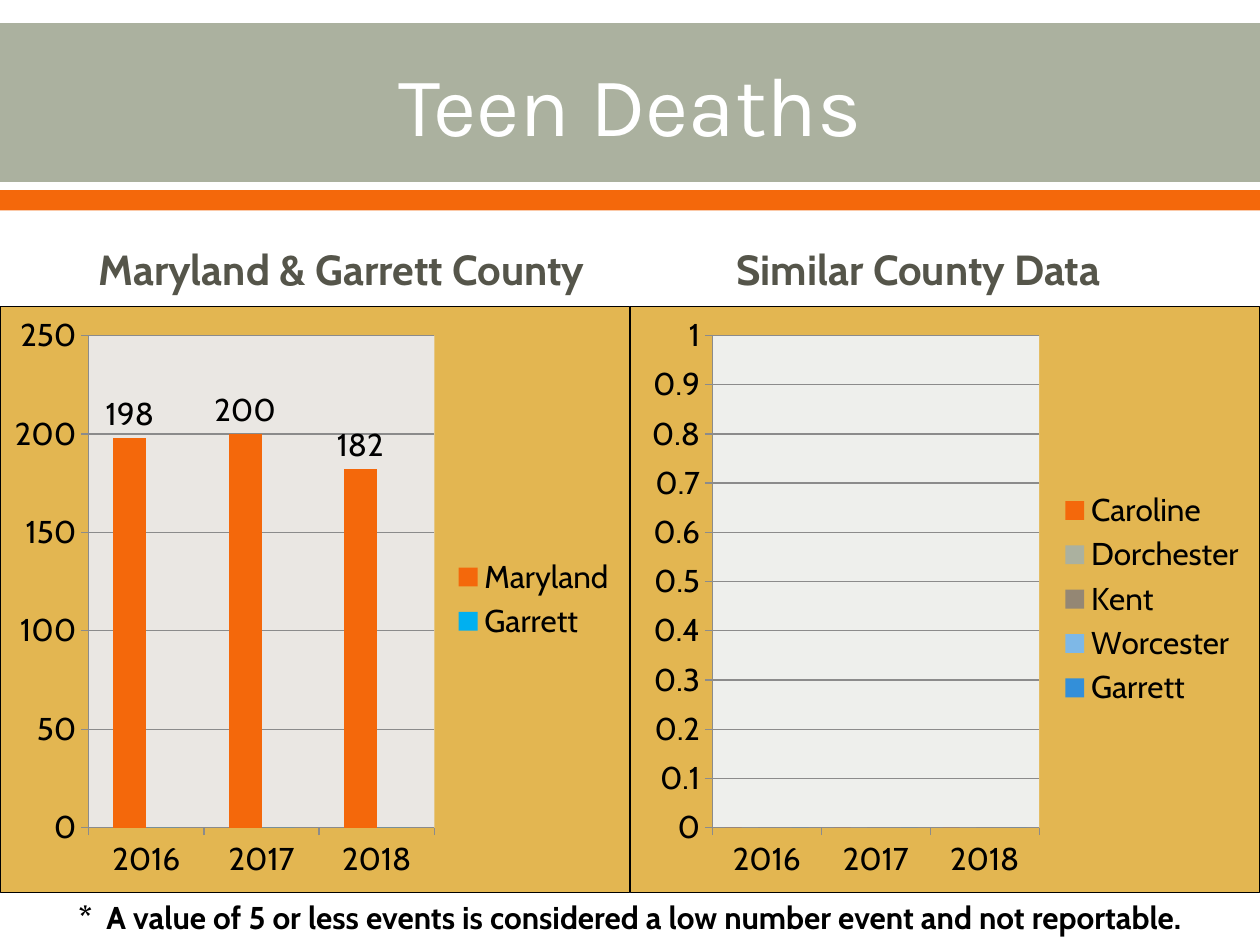
from pptx import Presentation
from pptx.chart.data import CategoryChartData as ChartData
from pptx.dml.color import RGBColor
from pptx.enum.chart import (XL_CHART_TYPE as ChartType, XL_LABEL_POSITION as LabelPosition,
                             XL_LEGEND_POSITION as LegendPosition, XL_TICK_MARK as TickMark)
from pptx.enum.shapes import MSO_SHAPE as Preset
from pptx.enum.text import MSO_ANCHOR as Anchor, MSO_AUTO_SIZE as AutoSize, PP_ALIGN as Align
from pptx.oxml import parse_xml
from pptx.oxml.ns import nsdecls, qn
from pptx.util import Pt

WHITE = RGBColor(0xFF, 0xFF, 0xFF)
BLACK = RGBColor(0, 0, 0)
SAGE = RGBColor(0xAB, 0xB1, 0x9F)
ORANGE = RGBColor(0xF4, 0x68, 0x0B)
OLIVE = RGBColor(0x55, 0x55, 0x4A)
GOLD = RGBColor(0xE3, 0xB6, 0x51)
WARM_GREY = RGBColor(0xEA, 0xE7, 0xE3)
COOL_GREY = RGBColor(0xEE, 0xEF, 0xEC)
LINE_GREY = RGBColor(0x8B, 0x8B, 0x8B)
CYAN = RGBColor(0x00, 0xB0, 0xF0)
TAUPE = RGBColor(0x94, 0x87, 0x74)
SKY = RGBColor(0x7E, 0xB8, 0xE7)
BLUE = RGBColor(0x33, 0x8F, 0xD9)

YEARS = ("2016", "2017", "2018")
NO_DEATHS = (0, 0, 0)
STATE_SERIES = (("Maryland", (198, 200, 182), ORANGE), ("Garrett", NO_DEATHS, CYAN))
COUNTY_SERIES = (
    ("Caroline", NO_DEATHS, ORANGE),
    ("Dorchester", NO_DEATHS, SAGE),
    ("Kent", NO_DEATHS, TAUPE),
    ("Worcester", (None, None, None), SKY),
    ("Garrett", NO_DEATHS, BLUE),
)


def set_font(font, color, **values):
    """Apply a colour and any format values to a font."""
    for name, value in values.items():
        setattr(font, name, value)
    font.color.rgb = color


def place(item, box):
    """Move and size an item to a box given in points."""
    for name, value in zip(("left", "top", "width", "height"), box):
        setattr(item, name, Pt(value))


def write_text(item, box, text, anchor, color, **values):
    """Put one centred, formatted line of text in an item."""
    place(item, box)
    frame = item.text_frame
    frame.word_wrap = True
    frame.auto_size = AutoSize.NONE
    frame.vertical_anchor = anchor
    para = frame.paragraphs[0]
    para.alignment = Align.CENTER
    span = para.add_run()
    span.text = text
    set_font(span.font, color, **values)


def add_band(page, box, color):
    """Draw a plain colour band behind everything else."""
    band = page.shapes.add_shape(Preset.RECTANGLE, *map(Pt, box))
    band.shadow.inherit = False
    band.fill.solid()
    band.fill.fore_color.rgb = color
    band.line.fill.background()
    page.shapes.element.insert(2, band.element)


def add_header(page, box):
    """Draw the title on its sage band with the orange stripe below."""
    left, top, width, height = box
    add_band(page, (left, top, width, height), SAGE)
    add_band(page, (left, top + height + 4.6, width, 11.7), ORANGE)
    write_text(page.shapes.title, (left + 36, top + 1.4, width - 72, height - 2.8), "Teen Deaths",
               Anchor.MIDDLE, WHITE, size=Pt(48), name="Karla", bold=False)


def area_format(fill, line):
    """Return shape properties with a solid fill and a line element."""
    return parse_xml(f'<c:spPr {nsdecls("c", "a")}><a:solidFill><a:srgbClr val="{fill}"/>'
                     f'</a:solidFill>{line}</c:spPr>')


def paint_chart(chart, plot_fill, plot_box):
    """Colour the chart and plot areas and fix the inner plot box."""
    border = f'<a:ln w="{Pt(0.75)}"><a:solidFill><a:srgbClr val="{BLACK}"/></a:solidFill></a:ln>'
    body = chart.element.find(qn("c:chart"))
    body.addnext(area_format(GOLD, border))
    area = body.find(qn("c:plotArea"))
    for old in area.findall(qn("c:layout")):
        area.remove(old)
    modes = '<c:layoutTarget val="inner"/><c:xMode val="edge"/><c:yMode val="edge"/>'
    sides = "".join(f'<c:{side} val="{value}"/>' for side, value in zip("xywh", plot_box))
    area.insert(0, parse_xml(f'<c:layout {nsdecls("c")}><c:manualLayout>{modes}{sides}'
                             '</c:manualLayout></c:layout>'))
    area.append(area_format(plot_fill, "<a:ln><a:noFill/></a:ln>"))


def format_axes(chart, top, step):
    """Set the scale, ticks, lines and gridlines of both axes."""
    scale = chart.value_axis
    limits = dict(minimum_scale=0, maximum_scale=top, major_unit=step, has_major_gridlines=True)
    for name, value in limits.items():
        setattr(scale, name, value)
    scale.tick_labels.number_format = "General"
    scale.tick_labels.number_format_is_linked = False
    for axis in (scale, chart.category_axis):
        axis.major_tick_mark = TickMark.OUTSIDE
        axis.minor_tick_mark = TickMark.NONE
    for part in (scale, chart.category_axis, scale.major_gridlines):
        part.format.line.color.rgb = LINE_GREY
        part.format.line.width = Pt(0.75)


def add_column_chart(page, box, rows, top, step, plot_fill, plot_box):
    """Draw a clustered column chart with a legend on the right."""
    data = ChartData()
    data.categories = YEARS
    for name, values, _ in rows:
        data.add_series(name, values)
    chart = page.shapes.add_chart(ChartType.COLUMN_CLUSTERED, *map(Pt, box), data).chart
    set_font(chart.font, BLACK, size=Pt(18), name="Cabin")
    chart.has_title = False
    chart.has_legend = True
    chart.legend.position = LegendPosition.RIGHT
    chart.legend.include_in_layout = False
    plot = chart.plots[0]
    for name, value in dict(gap_width=150, overlap=0, vary_by_categories=False).items():
        setattr(plot, name, value)
    for series, (_, _, color) in zip(plot.series, rows):
        series.format.fill.solid()
        series.format.fill.fore_color.rgb = color
    format_axes(chart, top, step)
    paint_chart(chart, plot_fill, plot_box)
    return chart


def add_panel(page, box, heading, text, heading_left, **chart_values):
    """Place a heading over a column chart and return the chart."""
    left, top, width, height = box
    write_text(heading, (heading_left, top, 318.2, 50.4), text, Anchor.BOTTOM, OLIVE,
               size=Pt(24), name="Cabin", bold=True)
    return add_column_chart(page, (left, top + 53.6, width, height - 53.6), **chart_values)


def add_footnote(page, box):
    """Write the note on low values along the bottom edge."""
    write_text(page.shapes.add_textbox(0, 0, 0, 0), box,
               "*  A value of 5 or less events is considered a low number event and not reportable.",
               Anchor.TOP, BLACK, size=Pt(18), name="Cabin", bold=True)


def main():
    """Build the slide and save the deck."""
    deck = Presentation()
    deck.slide_width, deck.slide_height = Pt(720), Pt(540)
    page = deck.slides.add_slide(deck.slide_layouts[4])
    _, left_heading, left_body, right_heading, right_body = page.placeholders
    for empty in (left_body, right_body):
        empty.element.getparent().remove(empty.element)

    add_header(page, (0, 13.2, 720, 90.8))
    state = add_panel(page, (0, 121, 360, 389.2), left_heading, "Maryland & Garrett County", 36,
                      rows=STATE_SERIES, top=250, step=50, plot_fill=WARM_GREY,
                      plot_box=(0.14, 0.05, 0.55, 0.84))
    labels = state.plots[0].series[0].data_labels
    labels.show_value = True
    labels.position = LabelPosition.OUTSIDE_END
    add_panel(page, (360, 121, 360, 389.2), right_heading, "Similar County Data", 365.8,
              rows=COUNTY_SERIES, top=1, step=0.1, plot_fill=COOL_GREY,
              plot_box=(0.13, 0.05, 0.52, 0.84))
    add_footnote(page, (0, 509.8, 720, 30.2))
    deck.save("out.pptx")


if __name__ == "__main__":
    main()
